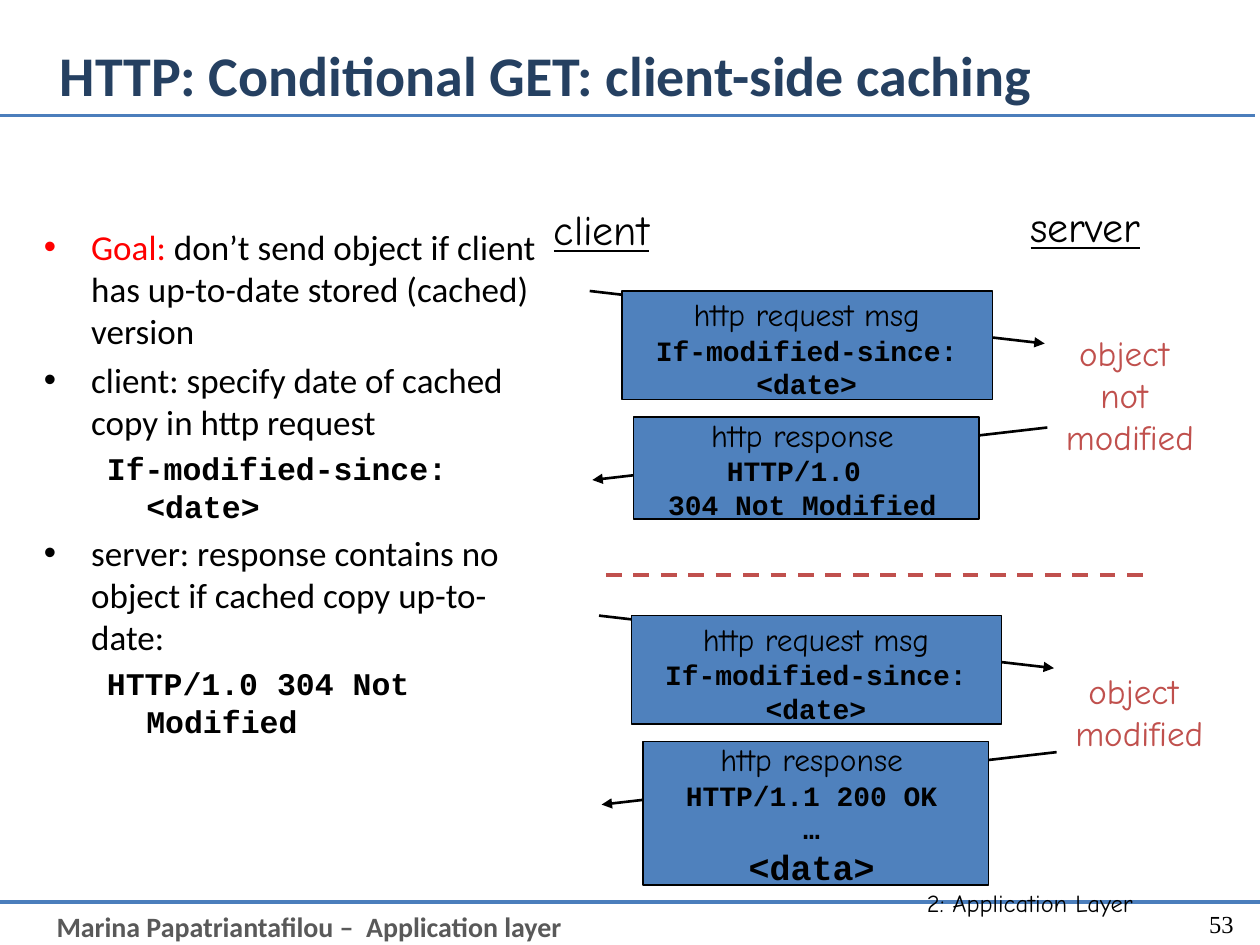
"""Build the slide on conditional GET and client-side caching."""
from lxml.etree import SubElement
from pptx import Presentation
from pptx.dml.color import RGBColor
from pptx.enum.dml import MSO_LINE
from pptx.enum.shapes import MSO_CONNECTOR, MSO_SHAPE
from pptx.enum.text import MSO_ANCHOR, PP_ALIGN
from pptx.oxml.ns import qn
from pptx.util import Pt

INK = {"black": "000000", "navy": "254061", "grey": "595959", "red": "FF0000",
       "brick": "C0504D", "blue": "4F81BD", "rule": "4B7EBC"}
FONT = {
    "title": dict(name="Calibri", size=Pt(32), bold=True),
    "foot": dict(name="Calibri", size=Pt(16), bold=True),
    "body": dict(name="Calibri", size=Pt(20)),
    "code": dict(name="Courier New", size=Pt(18), bold=True),
    "head": dict(name="Comic Neue", size=Pt(24), underline=True),
    "note": dict(name="Comic Neue", size=Pt(20)),
    "msg": dict(name="Comic Neue", size=Pt(18)),
    "field": dict(name="Courier New", size=Pt(16), bold=True),
    "data": dict(name="Courier New", size=Pt(20), bold=True),
    "label": dict(name="Comic Neue", size=Pt(14)),
    "page": dict(name="Times New Roman", size=Pt(14)),
}
LEFT, MID, RIGHT = PP_ALIGN.LEFT, PP_ALIGN.CENTER, PP_ALIGN.RIGHT


class Deck:
    """Hold the style and the current slide."""

    def __init__(self, wide, high):
        self.show = Presentation()
        self.show.slide_width, self.show.slide_height = Pt(wide), Pt(high)
        self.slide = self.show.slides.add_slide(self.show.slide_layouts[6])

    def run(self, para, text, style, ink="black"):
        """Add one styled run to a paragraph."""
        run = para.add_run()
        run.text = text
        for key, val in FONT[style].items():
            setattr(run.font, key, val)
        run.font.color.rgb = RGBColor.from_string(INK[ink])

    def text(self, spot, rows, ink="black", align=LEFT, wrap=True,
             anchor=MSO_ANCHOR.TOP):
        """Add a text box with one paragraph per (text, style) row."""
        frame = self.slide.shapes.add_textbox(*map(Pt, spot)).text_frame
        frame.word_wrap, frame.vertical_anchor = wrap, anchor
        for i, (text, style) in enumerate(rows):
            para = frame.add_paragraph() if i else frame.paragraphs[0]
            para.alignment = align
            self.run(para, text, style, ink)

    def list(self, spot, rows):
        """Add a bulleted list whose code rows are indented without a bullet."""
        frame = self.slide.shapes.add_textbox(*map(Pt, spot)).text_frame
        frame.word_wrap = True
        for i, (style, parts) in enumerate(rows):
            para = frame.add_paragraph() if i else frame.paragraphs[0]
            code = style == "code"
            para.level = int(code)
            para.space_before = Pt(3.6 if code else 4)
            left, hang = (58.5, 22.5) if code else (27, 27)
            prop = para._p.get_or_add_pPr()
            prop.set("marL", str(Pt(left)))
            prop.set("indent", str(-Pt(hang)))
            if code:
                SubElement(prop, qn("a:buNone"))
            else:
                SubElement(prop, qn("a:buFont"), typeface="Arial")
                SubElement(prop, qn("a:buChar"), char="•")
            for text, ink in parts:
                self.run(para, text, style, ink)

    def line(self, ends, ink="black", width=1.5, dash=None, arrow=False):
        """Add a straight line or arrow."""
        link = self.slide.shapes.add_connector(
            MSO_CONNECTOR.STRAIGHT, *map(Pt, ends))
        link.line.color.rgb = RGBColor.from_string(INK[ink])
        for key, val in dict(width=Pt(width), dash_style=dash).items():
            setattr(link.line, key, val)
        if arrow:
            SubElement(link.line._get_or_add_ln(), qn("a:tailEnd"),
                       type="triangle")
        SubElement(link._element.spPr, qn("a:effectLst"))

    def box(self, spot):
        """Add a blue box with a thin black outline."""
        box = self.slide.shapes.add_shape(MSO_SHAPE.RECTANGLE, *map(Pt, spot))
        box.shadow.inherit = False
        box.fill.solid()
        box.fill.fore_color.rgb = RGBColor.from_string(INK["blue"])
        box.line.color.rgb = RGBColor.from_string(INK["black"])
        box.line.width = Pt(0.75)

    def trade(self, x, y, tall, reply, top, note):
        """Add a request, its response and a note on the object."""
        self.line((x, y, x + 260, y + 30), arrow=True)
        self.box((x + 18.5, y, 211.7, 62))
        self.text((x + 18.5, y - 1, 211, 67.7),
                  [("http request msg", "msg"),
                   ("If-modified-since: <date>", "field")], align=MID)
        self.line((x + 261.5, y + 78, x + 1.5, y + 108), arrow=True)
        self.box((x + 25.2, y + 72, 197.3, tall))
        self.text((x + 17.5, y + 67.7, 208, tall + 9.3),
                  [("http response", "msg")] + reply, align=MID)
        self.text((x + 260.5, y + top, 96.5, 26 + 26 * len(note)),
                  [(word, "note") for word in note], "brick", MID, False)


def main():
    deck = Deck(720, 540)
    deck.line((0, 515.5, 720, 515.5), "rule", 2.25)
    deck.text((25.2, 516.2, 500, 24),
              [("Marina Papatriantafilou –  Application layer", "foot")], "grey")
    deck.line((-3, 66, 717, 66), "rule", 2.25)
    deck.text((426.2, 504, 228.3, 36), [("2: Application Layer", "label")],
              align=RIGHT)
    deck.text((654.5, 513.5, 57.5, 28.8), [("53", "page")], align=RIGHT,
              anchor=MSO_ANCHOR.MIDDLE)
    deck.text((27, 18, 627, 48.2),
              [("HTTP: Conditional GET: client-side caching", "title")], "navy",
              anchor=MSO_ANCHOR.MIDDLE)
    deck.list((18, 125.3, 306, 339), [
        ("body", [("Goal:", "red"),
                  (" don’t send object if client has up-to-date stored "
                   "(cached) version", "black")]),
        ("body", [("client: specify date of cached copy in http request",
                   "black")]),
        ("code", [("If-modified-since: <date>", "black")]),
        ("body", [("server: response contains no object if cached copy "
                   "up-to-date:", "black")]),
        ("code", [("HTTP/1.0 304 Not Modified", "black")]),
    ])
    deck.text((305.3, 113, 77, 36), [("client", "head")], align=MID, wrap=False)
    deck.text((576.7, 111, 87, 36), [("server", "head")], align=MID, wrap=False)
    deck.trade(337, 166.3, 58.3,
               [("HTTP/1.0 ", "field"), ("304 Not Modified", "field")],
               19.5, ["object ", "not ", "modified"])
    deck.line((346.3, 328.5, 653.8, 328.5), "brick", 2.25, MSO_LINE.DASH)
    deck.trade(342.3, 351.8, 82,
               [("HTTP/1.1 200 OK", "field"), ("…", "field"),
                ("<data>", "data")],
               27, ["object ", "modified"])
    deck.show.save("out.pptx")


if __name__ == "__main__":
    main()
